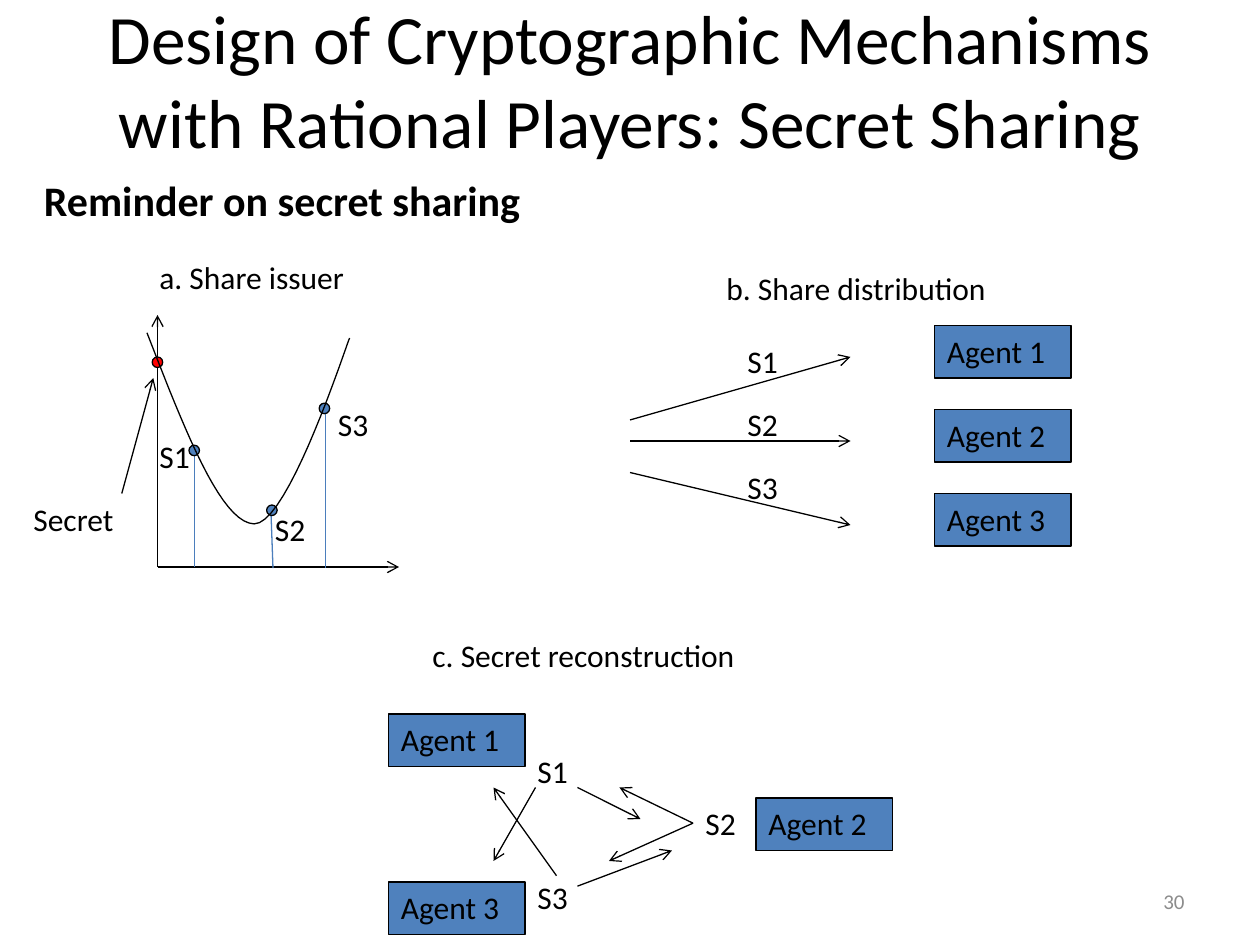
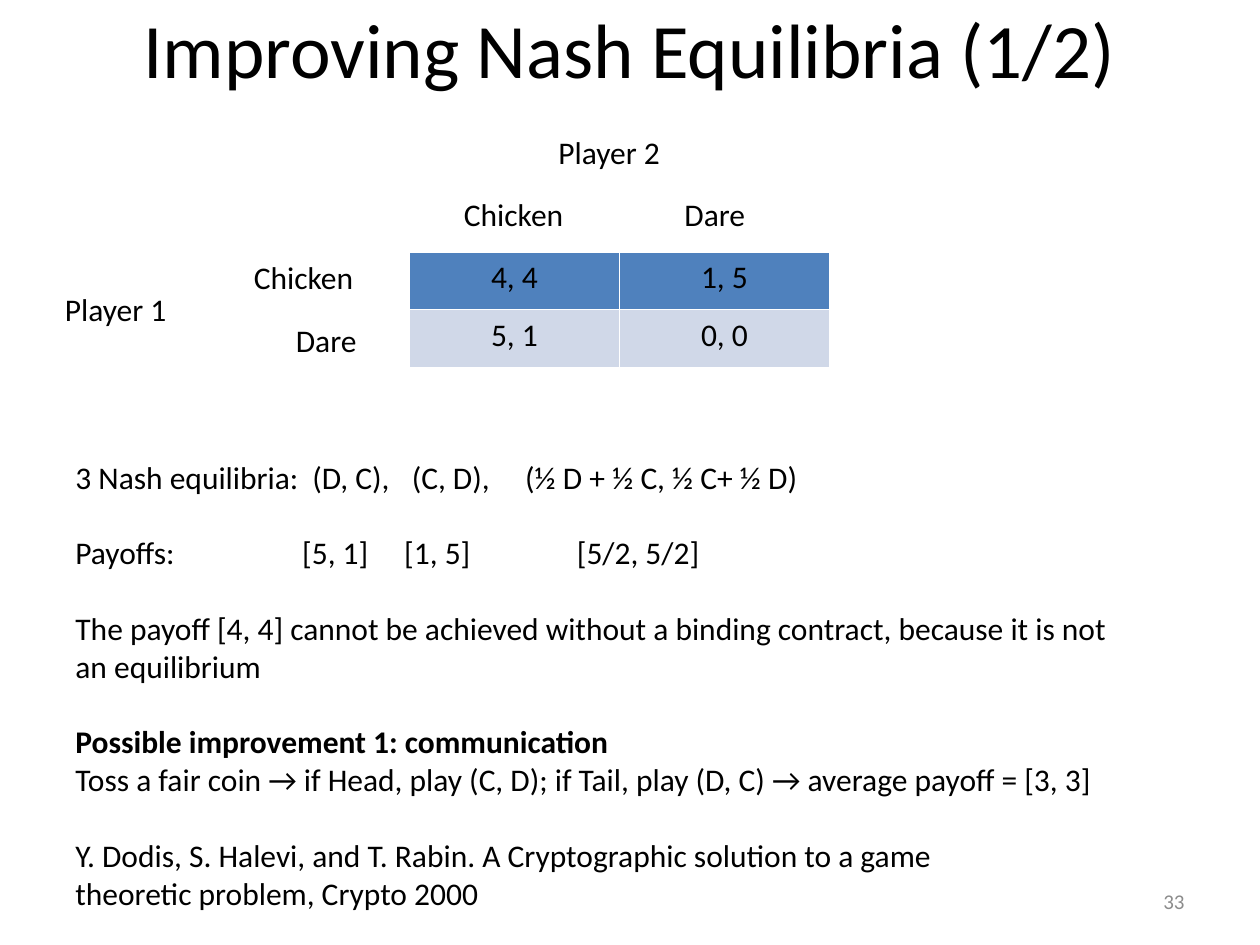
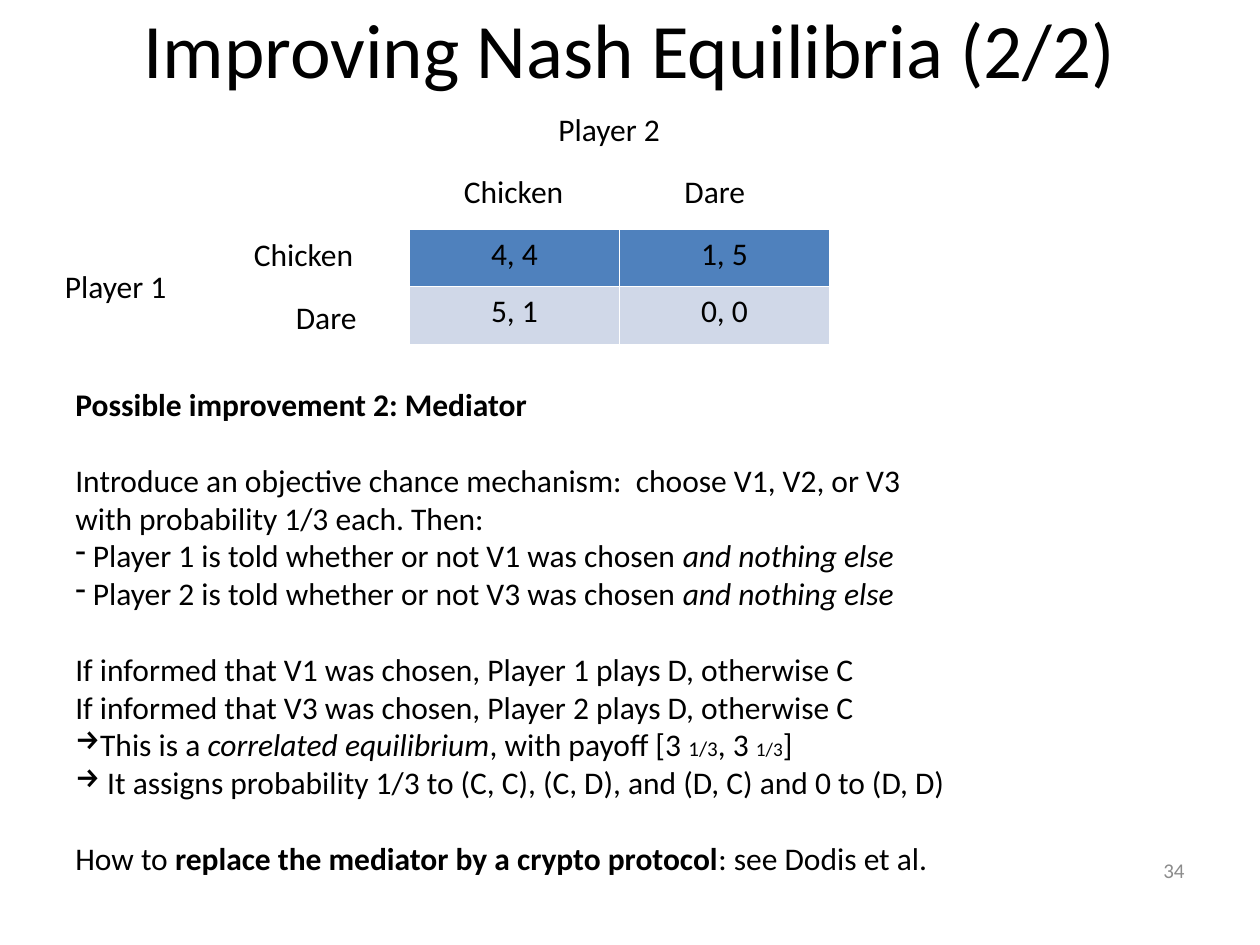
from dataclasses import dataclass

from lxml.etree import SubElement
from pptx import Presentation
from pptx.dml.color import RGBColor
from pptx.enum.shapes import MSO_CONNECTOR as Connector, MSO_SHAPE as Shape
from pptx.enum.text import MSO_ANCHOR as Anchor, MSO_AUTO_SIZE as AutoSize, PP_ALIGN as Align
from pptx.oxml.ns import qn
from pptx.util import Inches, Pt

COLUMNS, ROWS = 120, 90


@dataclass(frozen=True)
class Theme:
    font: str = "Calibri"
    ink: str = "000000"
    accent: str = "4F81BD"
    pale: str = "D0D8E8"
    guide: str = "4B7EBC"
    secret: str = "FF0000"
    muted: str = "8C8C8C"
    title: float = 44
    long_title: float = 39.6
    heading: float = 24
    body: float = 18
    number: float = 12
    fraction: float = 11
    hairline: float = 0.75
    blank_line: float = 21.6


@dataclass
class Line:
    spans: list
    gap: bool = False
    bold: bool = False
    bullet: str = ""
    tabs: tuple = ()


class Page:
    def __init__(self, deck, theme):
        self.theme = theme
        self.column = deck.slide_width / COLUMNS
        self.row = deck.slide_height / ROWS
        self.slide = deck.slides.add_slide(deck.slide_layouts[5])
        self.shapes = self.slide.shapes

    def point(self, x, y):
        return round(x * self.column), round(y * self.row)

    def frame(self, left, top, width, height):
        return *self.point(left, top), *self.point(width, height)

    def style(self, para, size=None, color=None, align=Align.LEFT, bold=False):
        para.alignment = align
        font = para.font
        font.name, font.size, font.bold = self.theme.font, Pt(size or self.theme.body), bold
        font.color.rgb = RGBColor.from_string(color or self.theme.ink)

    def paint(self, shape, fill):
        shape.shadow.inherit = False
        shape.fill.solid()
        shape.fill.fore_color.rgb = RGBColor.from_string(fill)
        self.outline(shape, self.theme.ink)

    def outline(self, shape, color):
        shape.line.color.rgb = RGBColor.from_string(color)
        shape.line.width = Pt(self.theme.hairline)

    def title(self, text, top=-3, size=None):
        box = self.shapes.title
        box.left, box.top, box.width, box.height = self.frame(6, top, 108, 15)
        frame = box.text_frame
        frame.text = text
        frame.auto_size = AutoSize.NONE
        frame.vertical_anchor = Anchor.MIDDLE
        self.style(frame.paragraphs[0], size or self.theme.title, align=Align.CENTER)

    def number(self, text, top=83.4, height=4.8):
        frame = self.shapes.add_textbox(*self.frame(86, top, 28, height)).text_frame
        frame.word_wrap = True
        frame.vertical_anchor = Anchor.MIDDLE
        frame.text = text
        self.style(frame.paragraphs[0], self.theme.number, self.theme.muted, Align.RIGHT)

    def text_frame(self, left, top, width, height):
        frame = self.shapes.add_textbox(*self.frame(left, top, width, height)).text_frame
        frame.word_wrap = False
        frame.auto_size = AutoSize.SHAPE_TO_FIT_TEXT
        return frame

    def label(self, text, left, top, width=6.1, height=4.8, size=None, bold=False):
        frame = self.text_frame(left, top, width, height)
        frame.text = text
        self.style(frame.paragraphs[0], size, bold=bold)

    def body(self, lines, top, width, height):
        frame = self.text_frame(6, top, width, height)
        for index, line in enumerate(lines):
            para = frame.add_paragraph() if index else frame.paragraphs[0]
            self.fill_paragraph(para, line)

    def fill_paragraph(self, para, line):
        properties = para._p.get_or_add_pPr()
        if line.bullet:
            SubElement(properties, qn("a:buChar"), char=line.bullet)
        if line.tabs:
            stops = SubElement(properties, qn("a:tabLst"))
            for stop in line.tabs:
                SubElement(stops, qn("a:tab"), pos=str(Inches(stop)), algn="l")
        if len(line.spans) == 1:
            para.text = line.spans[0]
        else:
            for span in line.spans:
                self.add_span(para, span)
        self.style(para, bold=line.bold)
        if line.gap:
            para.space_before = Pt(self.theme.blank_line)

    def add_span(self, para, span):
        text, size, bold, italic = (span, None, None, None) if isinstance(span, str) else span
        run = para.add_run()
        run.text = text
        run.font.size, run.font.bold, run.font.italic = size, bold, italic

    def agent(self, number, left, top):
        box = self.shapes.add_shape(Shape.RECTANGLE, *self.frame(left, top, 13, 5))
        self.paint(box, self.theme.accent)
        box.text_frame.text = f"Agent {number}"
        box.text_frame.vertical_anchor = Anchor.TOP
        self.style(box.text_frame.paragraphs[0])

    def dot(self, left, top, fill):
        self.paint(self.shapes.add_shape(Shape.OVAL, *self.frame(left, top, 1, 1)), fill)

    def line(self, start, end, color=None, arrow=False):
        connector = self.shapes.add_connector(
            Connector.STRAIGHT, *self.point(*start), *self.point(*end))
        self.outline(connector, color or self.theme.ink)
        properties = connector.element.spPr
        if arrow:
            SubElement(properties.find(qn("a:ln")), qn("a:tailEnd"), type="arrow")
        SubElement(properties, qn("a:effectLst"))

    def arrow(self, start, end):
        self.line(start, end, arrow=True)

    def curve(self, *beziers, steps=20):
        points = [self.point(*beziers[0][0])]
        for bezier in beziers:
            for step in range(1, steps + 1):
                t = step / steps
                weights = (1 - t) ** 3, 3 * t * (1 - t) ** 2, 3 * t ** 2 * (1 - t), t ** 3
                points.append(self.point(*(
                    sum(weight * value for weight, value in zip(weights, axis))
                    for axis in zip(*bezier))))
        builder = self.shapes.build_freeform(*points[0])
        builder.add_line_segments(points[1:], close=False)
        shape = builder.convert_to_shape()
        shape.shadow.inherit = False
        shape.fill.background()
        self.outline(shape, self.theme.ink)

    def payoff_matrix(self, top):
        payoffs = (("4, 4", "1, 5"), ("5, 1", "0, 0"))
        table = self.shapes.add_table(2, 2, *self.frame(39, top, 40, 11)).table
        table.first_row = table.horz_banding = False
        for r, (values, fill) in enumerate(zip(payoffs, (self.theme.accent, self.theme.pale))):
            for c, value in enumerate(values):
                cell = table.cell(r, c)
                cell.text = value
                cell.fill.solid()
                cell.fill.fore_color.rgb = RGBColor.from_string(fill)
                self.style(cell.text_frame.paragraphs[0], align=Align.CENTER)
        for text, left, offset, width in (
                ("Chicken", 43, -6, 13.3), ("Chicken", 23, 0, 13.3),
                ("Dare", 64, -6, 9), ("Dare", 27, 6, 9),
                ("Player 1", 5, 3, 13.5), ("Player 2", 52, -11.9, 13.5)):
            self.label(text, left, top + offset, width)


def share_issuer(page):
    theme = page.theme
    origin = (15, 54)
    page.label("a. Share issuer", 14, 24, 22.8)
    page.arrow(origin, (15, 30))
    page.arrow(origin, (38, 54))
    for start, end in (((18.5, 43), (18.5, 54)), ((25.8, 48.6), (26, 54.1)), ((31, 39), (31, 54.1))):
        page.line(start, end, theme.guide)
    for left, top, fill in ((18, 42.4, theme.accent), (25.4, 48.1, theme.accent),
                            (30.4, 38.4, theme.accent), (14.5, 34, theme.secret)):
        page.dot(left, top, fill)
    page.curve(((14, 31.7), (17.5, 40.7), (21, 49.8), (24.2, 49.9)),
               ((24.2, 49.9), (27.5, 50), (33.2, 32.2), (33.3, 32.2)))
    for text, left, top in (("S1", 14, 41), ("S2", 25, 48), ("S3", 31, 38)):
        page.label(text, left, top)
    page.label("Secret", 2, 47, 11.2)
    page.arrow((11.6, 47), (14.6, 36))


def share_distribution(page):
    page.label("b. Share distribution", 68, 25, 29.4)
    for index, (start, end) in enumerate(((40, 34), (42, 42), (45, 50))):
        page.agent(index + 1, 89, 31 + 8 * index)
        page.arrow((60, start), (81, end))
        page.label(f"S{index + 1}", 70, 32 + 6 * index)


def secret_reconstruction(page):
    page.label("c. Secret reconstruction", 40, 60, 34.2)
    for number, left, top, share_left, share_top in (
            (1, 37, 68, 50, 71), (2, 72, 76, 66, 76), (3, 37, 84, 50, 83)):
        page.agent(number, left, top)
        page.label(f"S{number}", share_left, share_top)
    for start, end in (((55, 75), (61, 78)), ((55, 84.4), (64, 81)),
                       ((66, 78.4), (59, 75)), ((51, 75), (47, 82)),
                       ((53, 83.4), (47, 75)), ((66, 78.4), (58, 82))):
        page.arrow(start, end)


def secret_sharing(page):
    page.title("Design of Cryptographic Mechanisms with Rational Players: Secret Sharing",
               0, page.theme.long_title)
    page.label("Reminder on secret sharing", 3, 16, 55.8, 6.1, page.theme.heading, True)
    share_issuer(page)
    share_distribution(page)
    secret_reconstruction(page)
    page.number("30")


def communication(page):
    page.title("Improving Nash Equilibria (1/2)")
    page.payoff_matrix(24)
    page.body([
        Line(["3 Nash equilibria:\t(D, C),\t(C, D),\t(½ D + ½ C, ½ C+ ½ D)"],
             tabs=(1.88, 2.67, 3.57)),
        Line(["Payoffs:\t[5, 1]\t[1, 5]\t[5/2, 5/2]"], gap=True, tabs=(1.8, 2.61, 3.98)),
        Line(["The payoff [4, 4] cannot be achieved without a binding contract, "
              "because it is not\nan equilibrium"], gap=True),
        Line(["Possible improvement 1: communication"], gap=True, bold=True),
        Line(["Toss a fair coin → if Head, play (C, D); if Tail, play (D, C) "
              "→ average payoff = [3, 3]"]),
        Line(["Y. Dodis, S. Halevi, and T. Rabin. A Cryptographic solution to a game\n"
              "theoretic problem, Crypto 2000"], gap=True),
    ], 43, 112.5, 46)
    page.number("33")


def mediator(page):
    def italic(text):
        return text, None, None, True

    def sized(text, size):
        return text, Pt(size), None, None

    page.title("Improving Nash Equilibria (2/2)")
    page.payoff_matrix(21.8)
    players = ((1, 1), (2, 3))
    page.body([
        Line(["Possible improvement 2: Mediator"], bold=True),
        Line(["Introduce an objective chance mechanism:  choose V1, V2, or V3\n"
              "with probability 1/3 each. Then:"], gap=True),
        *(Line([f" Player {player} is told whether or not V{value} was chosen ",
                italic("and nothing else")], bullet="-")
          for player, value in players),
        *(Line([f"If informed that V{value} was chosen, Player {player} plays D, otherwise C"],
               gap=player == 1)
          for player, value in players),
        Line(["This is a ", italic("correlated equilibrium"), ", with payoff [3 ",
              sized("1/3", page.theme.number), ", 3 ",
              sized("1/3", page.theme.fraction), "]"], bullet="→"),
        Line([" It assigns probability 1/3 to (C, C), (C, D), and (D, C) and 0 to (D, D)"],
             bullet="→"),
        Line(["How to ", ("replace the mediator by a crypto protocol", None, True, None),
              ": see Dodis et al."], gap=True),
    ], 36.1, 97, 53)
    page.number("34", 79.8, 6.2)


def main():
    deck = Presentation()
    deck.slide_width, deck.slide_height = Inches(10), Inches(7.5)
    theme = Theme()
    for build in (secret_sharing, communication, mediator):
        build(Page(deck, theme))
    deck.save("out.pptx")


if __name__ == "__main__":
    main()
